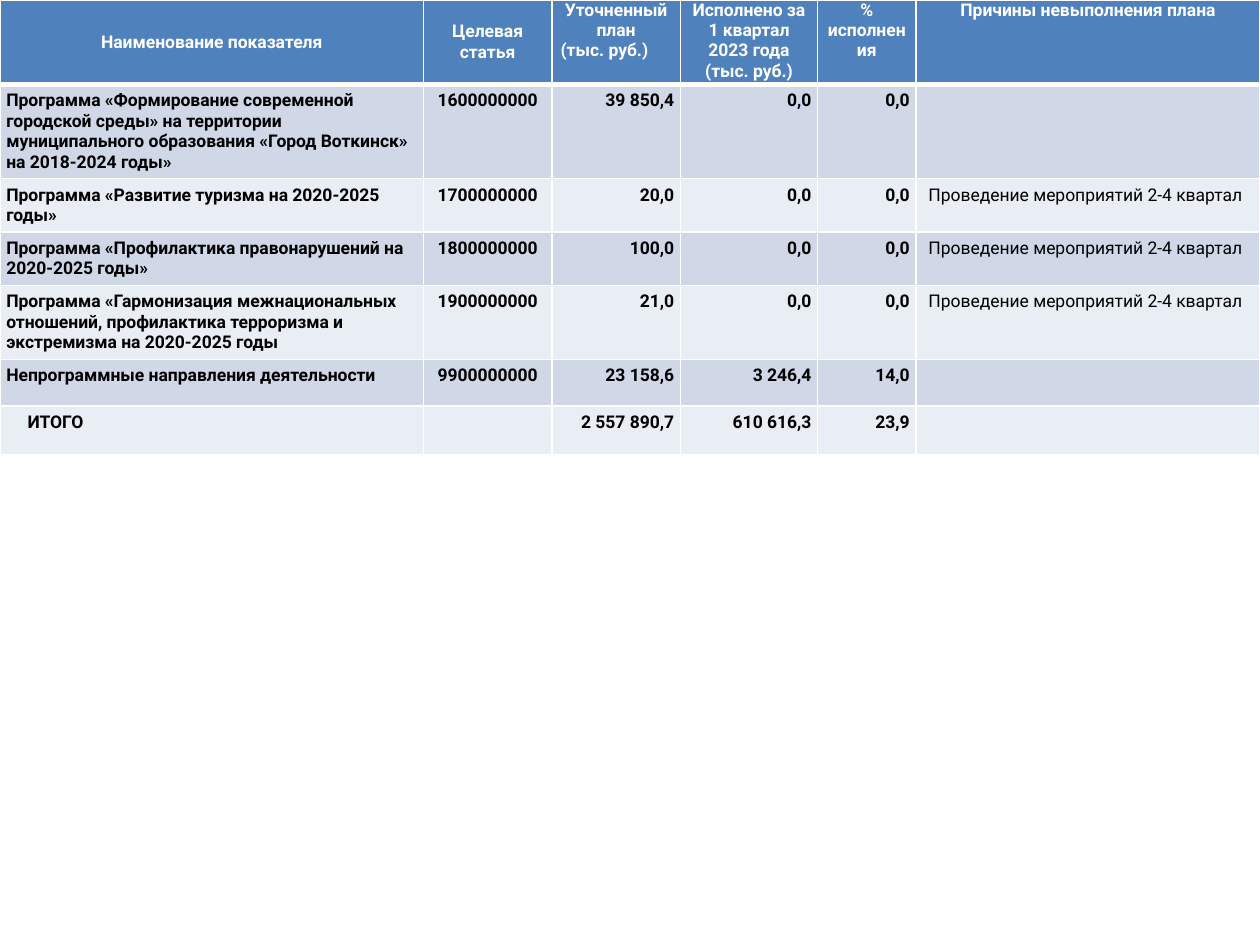
from lxml import etree
from pptx import Presentation
from pptx.dml.color import RGBColor
from pptx.enum.text import MSO_ANCHOR, PP_ALIGN
from pptx.oxml.ns import qn
from pptx.util import Inches, Pt

LEFT, CENTER, RIGHT = PP_ALIGN.LEFT, PP_ALIGN.CENTER, PP_ALIGN.RIGHT
TOP, MIDDLE = MSO_ANCHOR.TOP, MSO_ANCHOR.MIDDLE

WHITE, BLACK = "FFFFFF", "000000"
HEADER_FILL = "4F81BD"
BAND_FILLS = ("D0D8E8", "E9EDF4")

COLUMN_WIDTHS = (3.36, 1.02, 1.02, 1.09, 0.78, 2.73)
ROW_HEIGHTS = (0.67, 0.58, 0.33, 0.39, 0.58, 0.37, 0.39)
COLUMN_ALIGNMENTS = (LEFT, CENTER, RIGHT, RIGHT, RIGHT, LEFT)
REASON_COLUMN = 5
TOTAL_INDENT = 0.17

HEADERS = (
    "Наименование показателя",
    "Целевая статья",
    "Уточненный план\n(тыс. руб.)",
    "Исполнено за 1 квартал\n2023 года\n(тыс. руб.)",
    "% исполнения",
    "Причины невыполнения плана",
)
REASON = "Проведение мероприятий 2-4 квартал"
BUDGET_ROWS = (
    ("Программа «Формирование современной городской среды» на территории "
     "муниципального образования «Город Воткинск» на 2018-2024 годы»",
     "1600000000", "39 850,4", "0,0", "0,0", ""),
    ("Программа «Развитие туризма на 2020-2025 годы»",
     "1700000000", "20,0", "0,0", "0,0", REASON),
    ("Программа «Профилактика правонарушений на 2020-2025 годы»",
     "1800000000", "100,0", "0,0", "0,0", REASON),
    ("Программа «Гармонизация межнациональных отношений, профилактика "
     "терроризма и экстремизма на 2020-2025 годы",
     "1900000000", "21,0", "0,0", "0,0", REASON),
    ("Непрограммные направления деятельности",
     "9900000000", "23 158,6", "3 246,4", "14,0", ""),
    ("ИТОГО", "", "2 557 890,7", "610 616,3", "23,9", ""),
)


def rgb(color):
    return RGBColor.from_string(color)


def set_borders(cell, bottom_width):
    """Draw white borders, 1 pt wide except for the bottom one."""
    properties = cell._tc.get_or_add_tcPr()
    widths = {"a:lnL": 1, "a:lnR": 1, "a:lnT": 1, "a:lnB": bottom_width}
    for position, (side, width) in enumerate(widths.items()):
        line = etree.Element(qn(side), w=str(Pt(width)))
        fill = etree.SubElement(line, qn("a:solidFill"))
        etree.SubElement(fill, qn("a:srgbClr"), val=WHITE)
        properties.insert(position, line)


def fill_cell(cell, text, fill, color, alignment, margins, bold=True,
              anchor=TOP, bottom_width=1):
    cell.text = text
    cell.vertical_anchor = anchor
    side_margin, end_margin = margins
    cell.margin_left = cell.margin_right = Inches(side_margin)
    cell.margin_top = cell.margin_bottom = Inches(end_margin)
    cell.fill.solid()
    cell.fill.fore_color.rgb = rgb(fill)
    set_borders(cell, bottom_width)
    for paragraph in cell.text_frame.paragraphs:
        paragraph.alignment = alignment
        font = paragraph.font
        font.name, font.size, font.bold = "Roboto", Pt(10), bold
        font.color.rgb = rgb(color)


def add_budget_table(slide, left, top, width, height):
    table = slide.shapes.add_table(
        len(ROW_HEIGHTS), len(COLUMN_WIDTHS), left, top, width, height).table
    for column, column_width in zip(table.columns, COLUMN_WIDTHS):
        column.width = Inches(column_width)
    for row, row_height in zip(table.rows, ROW_HEIGHTS):
        row.height = Inches(row_height)

    for index, header in enumerate(HEADERS):
        fill_cell(table.cell(0, index), header, HEADER_FILL, WHITE, CENTER,
                  (0.07, 0), anchor=MIDDLE if index < 2 else TOP,
                  bottom_width=3)
    table.cell(0, 2).text_frame.paragraphs[1].alignment = LEFT

    for row_index, values in enumerate(BUDGET_ROWS, start=1):
        band = BAND_FILLS[(row_index - 1) % 2]
        for index, value in enumerate(values):
            is_reason = index == REASON_COLUMN
            fill_cell(table.cell(row_index, index), value, band, BLACK,
                      COLUMN_ALIGNMENTS[index],
                      (0.1 if is_reason else 0.05, 0.05),
                      bold=not is_reason)
    total_cell = table.cell(len(BUDGET_ROWS), 0)
    total_cell.margin_left += Inches(TOTAL_INDENT)


def main():
    presentation = Presentation()
    presentation.slide_width = Inches(10)
    presentation.slide_height = Inches(7.5)
    slide = presentation.slides.add_slide(presentation.slide_layouts[6])
    add_budget_table(slide, 0, 0, Inches(10), Inches(sum(ROW_HEIGHTS)))
    presentation.save("out.pptx")


if __name__ == "__main__":
    main()
